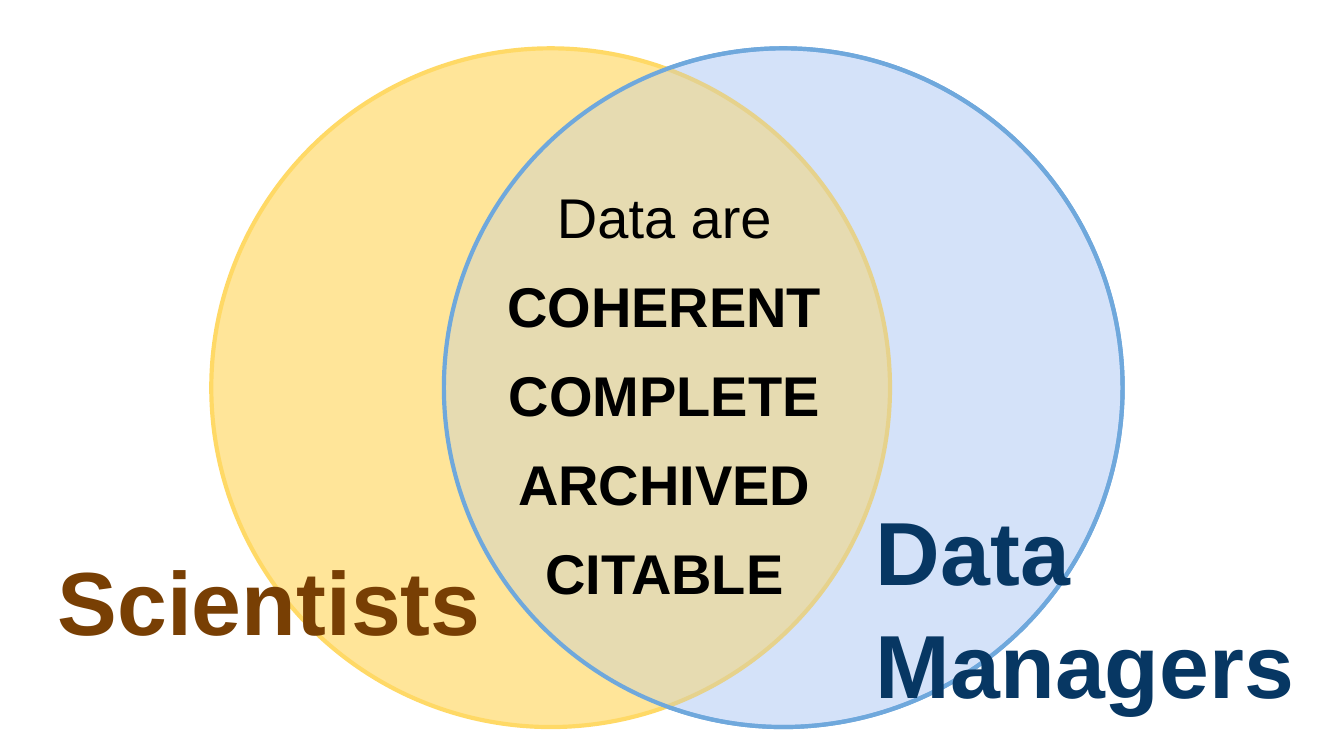
from dataclasses import dataclass

from lxml.etree import SubElement
from pptx import Presentation
from pptx.dml.color import RGBColor
from pptx.enum.shapes import MSO_SHAPE as Shape
from pptx.enum.text import MSO_ANCHOR as Anchor, PP_ALIGN as Align
from pptx.oxml.ns import qn
from pptx.util import Pt

DIAMETER = 363.6
CIRCLE_TOP = 25.9


@dataclass
class Circle:
    left: float
    fill: str
    line: str
    opacity: int = 100


@dataclass
class Label:
    text: str
    left: float
    top: float
    height: float
    color: str


def rgb(value: str) -> RGBColor:
    return RGBColor.from_string(value)


def add_circle(s, c: Circle) -> None:
    sp = s.shapes.add_shape(Shape.OVAL, Pt(c.left), Pt(CIRCLE_TOP), Pt(DIAMETER), Pt(DIAMETER))
    sp.shadow.inherit = False
    sp.fill.solid()
    sp.fill.fore_color.rgb = rgb(c.fill)
    if c.opacity < 100:
        color = sp.fill._xPr.find(qn("a:solidFill"))[0]
        SubElement(color, qn("a:alpha"), val=str(c.opacity * 1000))
    sp.line.color.rgb = rgb(c.line)
    sp.line.width = Pt(2.25)


def add_text(s, text: str, left: float, top: float, width: float, height: float, *,
             size: float, color: str = "000000", align=Align.LEFT,
             bold_from: int = 0, gap: float = 0) -> None:
    tf = s.shapes.add_textbox(Pt(left), Pt(top), Pt(width), Pt(height)).text_frame
    tf.word_wrap = True
    tf.vertical_anchor = Anchor.TOP
    tf.margin_left = tf.margin_right = tf.margin_top = tf.margin_bottom = Pt(7.2)
    for i, line in enumerate(text.split("\n")):
        p = tf.paragraphs[0] if i == 0 else tf.add_paragraph()
        p.alignment = align
        p.line_spacing = 1.05
        p.space_before = Pt(gap if i else 0)
        r = p.add_run()
        r.text = line
        r.font.name = "Arial"
        r.font.size = Pt(size)
        r.font.bold = i >= bold_from
        r.font.color.rgb = rgb(color)


def main() -> None:
    prs = Presentation()
    prs.slide_width, prs.slide_height = Pt(720), Pt(405)
    s = prs.slides.add_slide(prs.slide_layouts[6])

    scientists = Circle(113.2, "FFE599", "FFD966")
    managers = Circle(237.8, "A4C2F4", "6FA8DC", opacity=27)
    for circle in (managers, scientists, managers):
        add_circle(s, circle)

    add_text(s, "Data are\nCOHERENT\nCOMPLETE\nARCHIVED\nCITABLE", 253.3, 88.6, 205.2, 223.2,
             size=30, align=Align.CENTER, bold_from=1, gap=10)
    for label in (
        Label("Scientists", 23.8, 282.2, 67.7, "783F04"),
        Label("Data Managers", 462.2, 255.6, 123.1, "073763"),
    ):
        add_text(s, label.text, label.left, label.top, 244.1, label.height,
                 size=48, color=label.color)

    prs.save("out.pptx")


if __name__ == "__main__":
    main()
